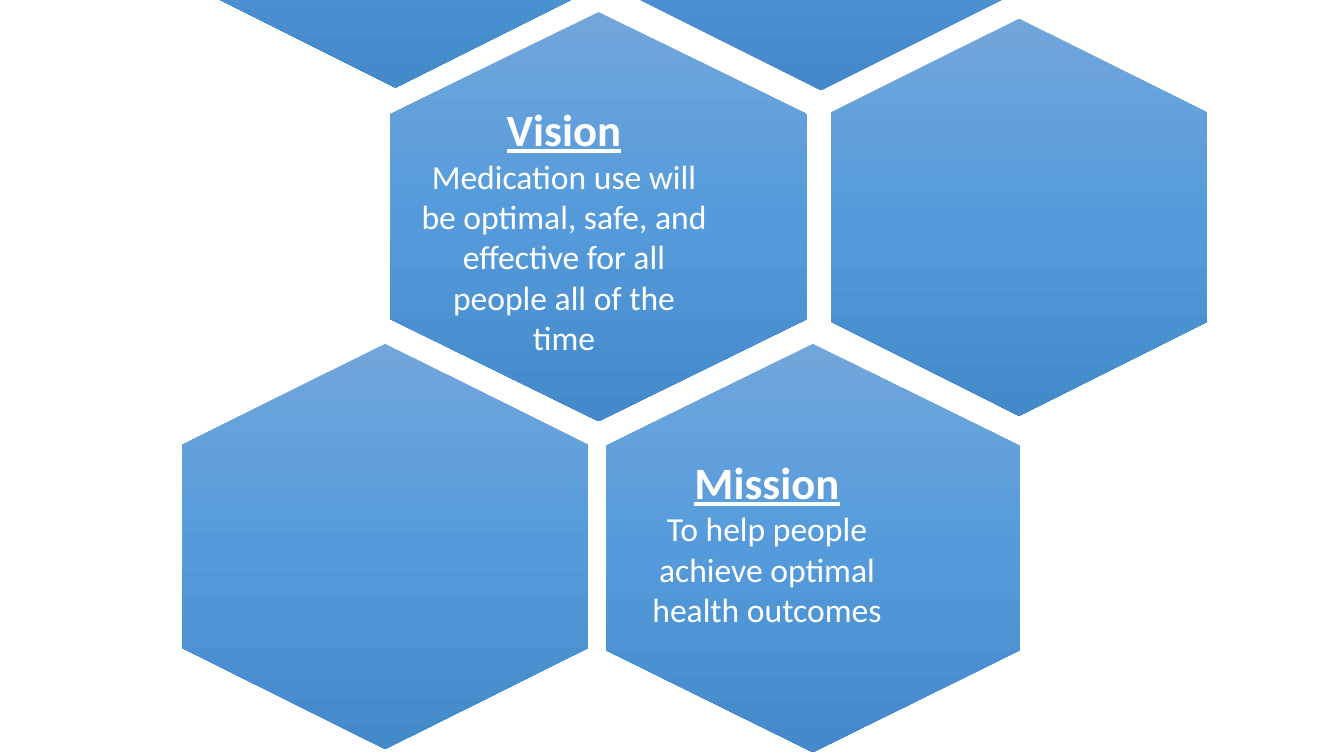
import copy

import pptx
import pptx.dml.color
import pptx.enum.shapes
import pptx.enum.text
import pptx.oxml.ns
import pptx.util

Cm = pptx.util.Cm

COLOURS = {"light": "71A6DB", "middle": "559BDB", "dark": "448ACA", "text": "FFFFFF"}
GRADIENT = [(0, "light"), (0.5, "middle"), (1, "dark")]

# left, top, width, height in cm, before the quarter turn
HEXAGONS = [
    (15.37, -8.18, 10.64, 10.26),
    (4.62, -8.28, 10.69, 10.29),
    (9.93, 0.2, 10.31, 10.52),
    (20.68, 0.74, 10.01, 9.47),
    (15.34, 8.59, 10.29, 10.44),
    (4.6, 8.64, 10.21, 10.26),
]

STATEMENTS = [
    ((10.34, 2.44, 7.75, 7.52), "Vision",
     "Medication use will be optimal, safe, and effective for all people all of the time"),
    ((15.57, 11.33, 7.52, 4.7), "Mission",
     "To help people achieve optimal health outcomes"),
]

HEADING = {"name": "Calibri", "size": pptx.util.Pt(32), "bold": True, "underline": True}
BODY = {"name": "Calibri", "size": pptx.util.Pt(24), "bold": False, "underline": False}


def colour(name):
    return pptx.dml.color.RGBColor.from_string(COLOURS[name])


def fill_gradient(shape):
    """Shade from top to bottom of the page, whatever the shape's rotation."""
    shape.fill.gradient()
    shape.fill.gradient_angle = 270
    gradient = shape._element.spPr.find(pptx.oxml.ns.qn("a:gradFill"))
    gradient.set("rotWithShape", "0")
    stop_list = gradient.find(pptx.oxml.ns.qn("a:gsLst"))
    stop_list.append(copy.deepcopy(stop_list[-1]))
    for stop, (position, name) in zip(shape.fill.gradient_stops, GRADIENT):
        stop.position = position
        stop.color.rgb = colour(name)


def add_hexagon(page, place):
    hexagon = page.shapes.add_shape(
        pptx.enum.shapes.MSO_SHAPE.HEXAGON, *map(Cm, place))
    hexagon.rotation = 90
    hexagon.shadow.inherit = False
    hexagon.line.fill.background()
    fill_gradient(hexagon)


def add_statement(page, place, heading, body):
    frame = page.shapes.add_textbox(*map(Cm, place)).text_frame
    frame.word_wrap = True
    frame.auto_size = pptx.enum.text.MSO_AUTO_SIZE.SHAPE_TO_FIT_TEXT
    paragraphs = [frame.paragraphs[0], frame.add_paragraph()]
    for para, text, style in zip(paragraphs, (heading, body), (HEADING, BODY)):
        para.alignment = pptx.enum.text.PP_ALIGN.CENTER
        span = para.add_run()
        span.text = text
        span.font.color.rgb = colour("text")
        for attribute, value in style.items():
            setattr(span.font, attribute, value)


def main():
    deck = pptx.Presentation()
    deck.slide_width, deck.slide_height = Cm(33.87), Cm(19.05)
    page = deck.slides.add_slide(deck.slide_layouts[6])
    for place in HEXAGONS:
        add_hexagon(page, place)
    for statement in STATEMENTS:
        add_statement(page, *statement)
    deck.save("out.pptx")


if __name__ == "__main__":
    main()
